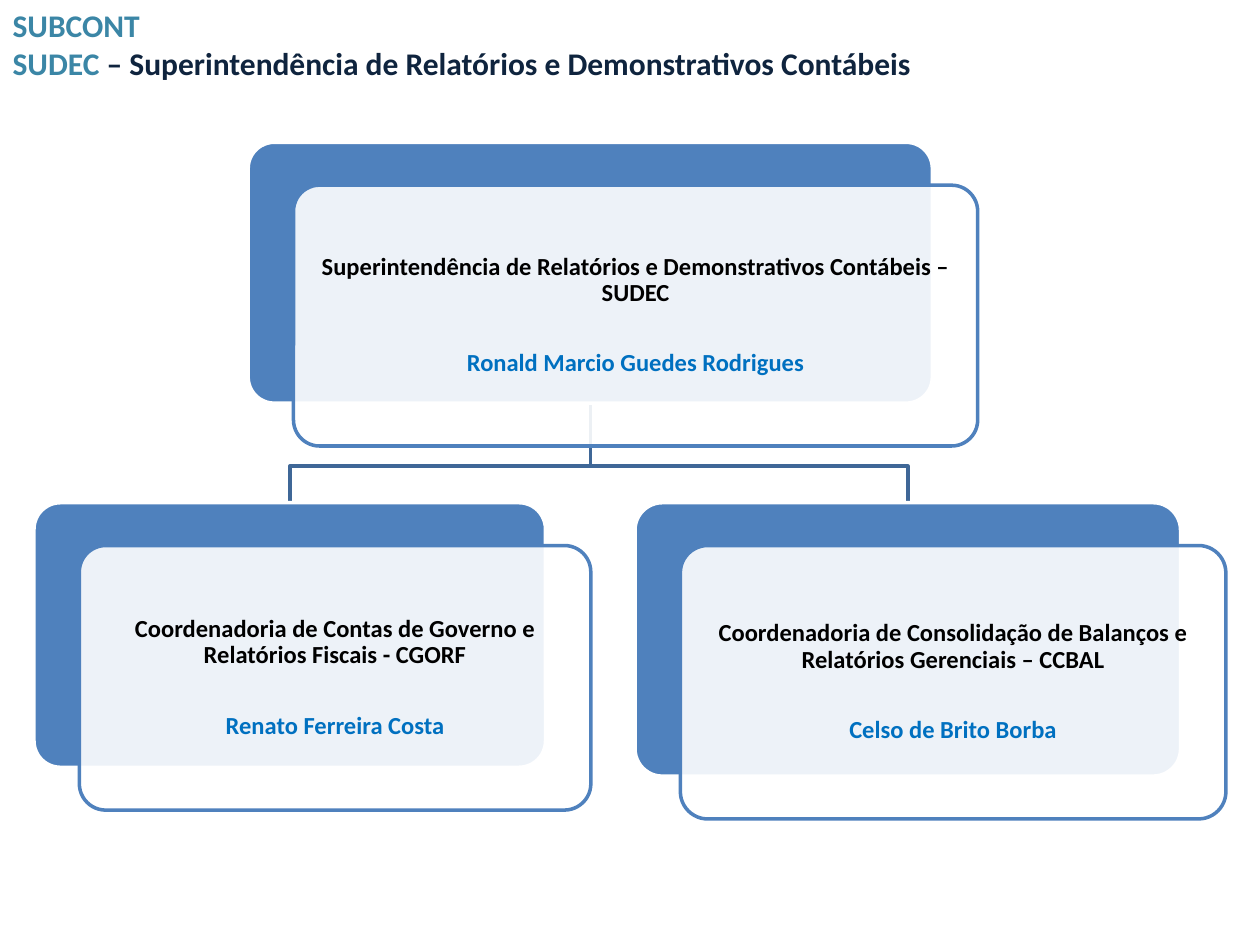
import pptx
import pptx.util
from lxml import etree
from pptx.dml.color import RGBColor
from pptx.enum.shapes import MSO_SHAPE
from pptx.enum.text import MSO_ANCHOR, MSO_AUTO_SIZE, PP_ALIGN
from pptx.oxml.ns import qn

Inches, Pt = pptx.util.Inches, pptx.util.Pt

BLUE = RGBColor(0x4F, 0x81, 0xBD)
LINK = RGBColor(0x3F, 0x67, 0x97)
WHITE = RGBColor(0xFF, 0xFF, 0xFF)
BLACK = RGBColor(0, 0, 0)
NAME = RGBColor(0x00, 0x70, 0xC0)
TEAL = RGBColor(0x3B, 0x86, 0xA6)
NAVY = RGBColor(0x0F, 0x24, 0x3E)
FONT = "Calibri"

# Content: title runs per line, then units as (unit, head, left, top, width, height)
TITLE = [
    [("SUBCONT", TEAL)],
    [("SUDEC", TEAL),
     (" – Superintendência de Relatórios e Demonstrativos Contábeis", NAVY)],
]
PARENT = ("Superintendência de Relatórios e Demonstrativos Contábeis – SUDEC",
          "Ronald Marcio Guedes Rodrigues", 1.97, 1.13, 5.43, 2.07)
CHILDREN = [
    ("Coordenadoria de Contas de Governo e Relatórios Fiscais - CGORF",
     "Renato Ferreira Costa", 0.27, 3.99, 4.06, 2.1),
    ("Coordenadoria de Consolidação de Balanços e Relatórios Gerenciais – CCBAL",
     "Celso de Brito Borba", 5.04, 3.99, 4.33, 2.17),
]
OFFSET = (0.36, 0.34)  # front card relative to back card
BEND = 0.5             # drop from the parent to the horizontal branch


def add_link(s, parent, child):
    _, _, px, py, pw, ph = parent
    _, _, cx, cy, cw, _ = child
    x0, y0, x1 = px + pw / 2, py + ph, cx + cw / 2
    builder = s.shapes.build_freeform(Inches(x0), Inches(y0))
    points = [(x0, y0 + BEND), (x1, y0 + BEND), (x1, cy)]
    builder.add_line_segments([(Inches(x), Inches(y)) for x, y in points], close=False)
    sp = builder.convert_to_shape()
    sp.shadow.inherit = False
    sp.fill.background()
    sp.line.color.rgb = LINK
    sp.line.width = Pt(2)


def add_card(s, x, y, w, h, fill, line):
    sp = s.shapes.add_shape(MSO_SHAPE.ROUNDED_RECTANGLE,
                            Inches(x), Inches(y), Inches(w), Inches(h))
    sp.adjustments[0] = 0.1
    sp.shadow.inherit = False
    sp.fill.solid()
    sp.fill.fore_color.rgb = fill
    sp.line.color.rgb = line
    sp.line.width = Pt(2)
    return sp


def add_unit(s, unit, head, x, y, w, h):
    add_card(s, x, y, w, h, BLUE, WHITE)
    sp = add_card(s, x + OFFSET[0], y + OFFSET[1], w, h, WHITE, BLUE)
    color = sp.fill._xPr.find(qn("a:solidFill"))[0]
    etree.SubElement(color, qn("a:alpha"), val="90000")

    tf = sp.text_frame
    tf.word_wrap = True
    tf.vertical_anchor = MSO_ANCHOR.MIDDLE
    tf.margin_left = tf.margin_right = tf.margin_top = tf.margin_bottom = 0
    for i, (text, color) in enumerate([(unit, BLACK), (head, NAME)]):
        p = tf.add_paragraph() if i else tf.paragraphs[0]
        p.text = text
        p.alignment = PP_ALIGN.CENTER
        p.line_spacing = 0.9
        if i:
            p.space_before = Pt(25)
        p.font.name, p.font.size, p.font.bold = FONT, Pt(14), True
        p.font.color.rgb = color


prs = pptx.Presentation()
prs.slide_width, prs.slide_height = Inches(10), Inches(7.5)
s = prs.slides.add_slide(prs.slide_layouts[5])

# Title
title = s.shapes.title
title.left, title.top, title.width, title.height = 0, 0, prs.slide_width, Inches(0.71)
tf = title.text_frame
tf.word_wrap = True
tf.auto_size = MSO_AUTO_SIZE.NONE
tf.vertical_anchor = MSO_ANCHOR.TOP
for i, runs in enumerate(TITLE):
    p = tf.add_paragraph() if i else tf.paragraphs[0]
    p.alignment = PP_ALIGN.LEFT
    p.font.name, p.font.size, p.font.bold = FONT, Pt(18), True
    for text, color in runs:
        r = p.add_run()
        r.text = text
        r.font.color.rgb = color

# Organisation chart: links behind the cards
for child in CHILDREN:
    add_link(s, PARENT, child)
for unit in [PARENT, *CHILDREN]:
    add_unit(s, *unit)

prs.save("out.pptx")
